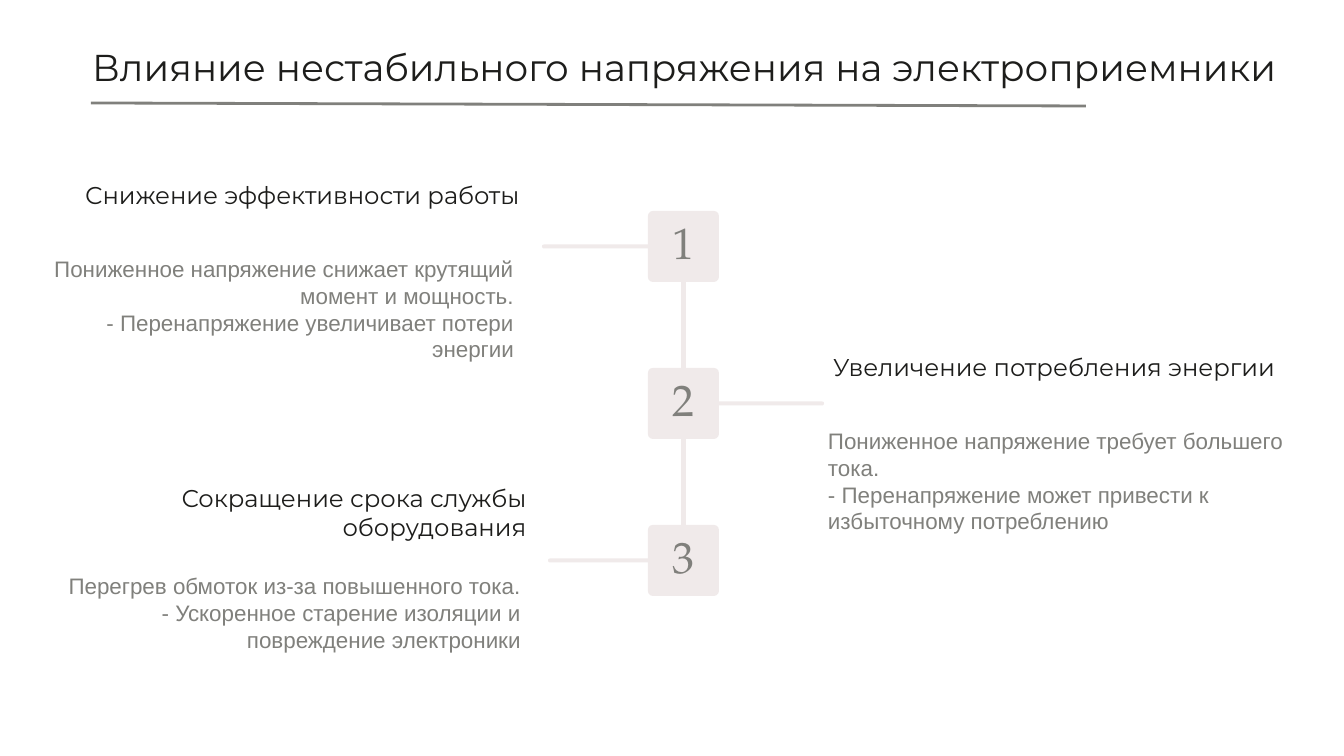
"""Builds the slide on how unstable voltage affects electrical loads."""
from dataclasses import dataclass

from pptx import Presentation
from pptx.dml.color import RGBColor
from pptx.enum.shapes import MSO_CONNECTOR as Connector, MSO_SHAPE as Shape
from pptx.enum.text import MSO_ANCHOR as Anchor, MSO_AUTO_SIZE as AutoSize, PP_ALIGN as Align
from pptx.oxml.ns import qn
from pptx.util import Pt
from lxml.etree import SubElement


@dataclass(frozen=True)
class Style:
    font: str
    size: float
    color: str


@dataclass(frozen=True)
class Theme:
    paper: str = "FFFFFF"
    tile: str = "F0EAEA"
    rule: str = "80807C"
    title: Style = Style("Montserrat", 20, "1D1D1B")
    heading: Style = Style("Montserrat", 13, "1D1D1B")
    body: Style = Style("Arial", 12, "80807C")
    number: Style = Style("TeX Gyre Pagella", 23.5, "80807C")


THEME = Theme()
TITLE = "Влияние нестабильного напряжения на электроприемники"
EFFECTS = [
    {"heading": "Снижение эффективности работы",
     "body": ["Пониженное напряжение снижает крутящий момент и мощность.",
              "- Перенапряжение увеличивает потери энергии"],
     "align": Align.RIGHT, "text_at": (31, 164), "bar_left": 542},
    {"heading": "Увеличение потребления энергии",
     "body": ["Пониженное напряжение требует большего тока.",
              "- Перенапряжение может привести к избыточному потреблению"],
     "align": Align.LEFT, "text_at": (833, 336), "bar_left": 714},
    {"heading": "Сокращение срока службы оборудования",
     "body": ["Перегрев обмоток из-за повышенного тока.",
              "- Ускоренное старение изоляции и повреждение электроники"],
     "align": Align.RIGHT, "text_at": (38, 481), "bar_left": 548},
]

SLIDE_W, SLIDE_H = 1344, 756
TILE_LEFT, TILE_TOP, TILE, TILE_STEP = 648, 211, 71, 157
BAR_W, BAR_H = 110, 4
TEXT_W, HEADING_H, BODY_H = 488, 62, 105
BODY_DX, BODY_DY = -5, 91


def px(*lengths):
    return [round(length * 914400 / 134.4) for length in lengths]


def rgb(color):
    return RGBColor.from_string(color)


def write(frame, paragraphs, style, align, anchor, inset=0, spacing=None):
    frame.word_wrap = True
    frame.auto_size = AutoSize.NONE
    frame.vertical_anchor = anchor
    frame.margin_left = frame.margin_right = px(inset)[0]
    frame.margin_top = frame.margin_bottom = px(inset)[0]
    for index, words in enumerate(paragraphs):
        paragraph = frame.add_paragraph() if index else frame.paragraphs[0]
        paragraph.alignment = align
        if spacing:
            paragraph.line_spacing = spacing
        run = paragraph.add_run()
        run.text = words
        run.font.name = style.font
        run.font.size = Pt(style.size)
        run.font.color.rgb = rgb(style.color)


def add_text(slide, box, paragraphs, style, align, anchor):
    frame = slide.shapes.add_textbox(*px(*box)).text_frame
    write(frame, paragraphs, style, align, anchor)


def add_block(slide, box, rounding):
    block = slide.shapes.add_shape(Shape.ROUNDED_RECTANGLE, *px(*box))
    block.adjustments[0] = rounding
    block.shadow.inherit = False
    block.fill.solid()
    block.fill.fore_color.rgb = rgb(THEME.tile)
    block.line.fill.background()
    return block


def add_line(slide, ends, color, width):
    line = slide.shapes.add_connector(Connector.STRAIGHT, *px(*ends))
    line.line.color.rgb = rgb(color)
    line.line.width = Pt(width)
    SubElement(line._element.spPr, qn("a:effectLst"))
    return line


def add_title(slide):
    title = slide.shapes.title
    title.left, title.top, title.width, title.height = px(79, 0, 1250, 102)
    write(title.text_frame, [TITLE], THEME.title, Align.LEFT, Anchor.BOTTOM, inset=13)
    add_line(slide, (91, 103, 1086, 106), THEME.rule, 1.5)


def add_timeline(slide):
    tops = [TILE_TOP + TILE_STEP * index for index in range(len(EFFECTS))]
    middle = TILE_LEFT + TILE / 2
    spine = add_line(slide, (middle, tops[0] + TILE, middle, tops[-1]), THEME.tile, 2.25)
    tiles = []
    for number, (effect, top) in enumerate(zip(EFFECTS, tops), 1):
        bar_top = top + (TILE - BAR_H) / 2
        add_block(slide, (effect["bar_left"], bar_top, BAR_W, BAR_H), 0.5)
        tile = add_block(slide, (TILE_LEFT, top, TILE, TILE), 0.07)
        write(tile.text_frame, [str(number)], THEME.number, Align.CENTER, Anchor.MIDDLE,
              spacing=Pt(THEME.number.size))
        tiles.append(tile)
    spine.begin_connect(tiles[0], 2)
    spine.end_connect(tiles[-1], 0)


def add_descriptions(slide):
    for effect in EFFECTS:
        left, top = effect["text_at"]
        add_text(slide, (left, top, TEXT_W, HEADING_H), [effect["heading"]],
                 THEME.heading, effect["align"], Anchor.MIDDLE)
        add_text(slide, (left + BODY_DX, top + BODY_DY, TEXT_W, BODY_H), effect["body"],
                 THEME.body, effect["align"], Anchor.TOP)


def main():
    deck = Presentation()
    deck.slide_width, deck.slide_height = px(SLIDE_W, SLIDE_H)
    slide = deck.slides.add_slide(deck.slide_layouts[5])
    slide.background.fill.solid()
    slide.background.fill.fore_color.rgb = rgb(THEME.paper)
    add_title(slide)
    add_timeline(slide)
    add_descriptions(slide)
    deck.save("out.pptx")


if __name__ == "__main__":
    main()
